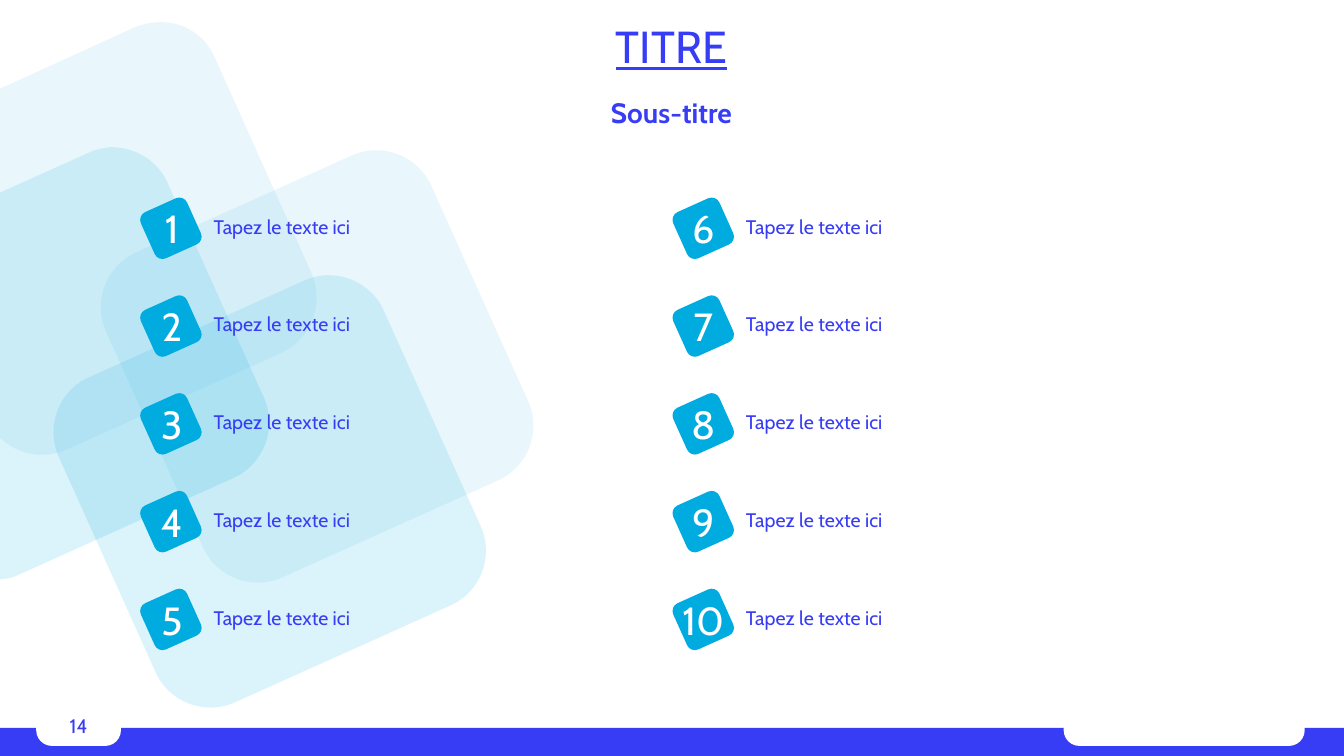
import math

from lxml import etree
from pptx import Presentation
from pptx import util as u
from pptx.dml.color import RGBColor
from pptx.enum import shapes, text
from pptx.oxml.ns import qn

BLUE, CYAN, SKY, WHITE = "373CF5", "00ABE0", "67C4E8", "FFFFFF"
FONT = "Cabin"
WIDTH, HEIGHT = 13.33, 7.5

TITLE, SUBTITLE, PAGE = "TITRE", "Sous-titre", "14"
# Tile left, number left, number width, labels
ITEM_COLUMNS = [
    (1.39, 1.47, 0.47, ["Tapez le texte ici"] * 5),
    (6.67, 6.73, 0.49, ["Tapez le texte ici"] * 5),
]
FOOTER_TABS = [(10.55, 2.39), (0.36, 0.84)]  # left, width

# Whole background tiles: left, top, colour
WHOLE_TILES = [(0.53, 2.73, CYAN), (1, 1.49, SKY)]
# Tiles cut at the slide's left edge: box, colour, outline (2 numbers: line, 6: curve)
CUT_TILES = [
    ((-0.02, 1.46, 2.69, 4.29), CYAN, [
        (1.1, 1.46), (1.34, 1.46, 1.56, 1.59, 1.66, 1.81), (2.62, 3.95),
        (2.75, 4.25, 2.62, 4.6, 2.32, 4.74), (0.19, 5.7),
        (0.15, 5.72, 0.11, 5.73, 0.07, 5.74), (-0.02, 5.75), (-0.02, 1.92),
        (0.87, 1.52), (0.95, 1.48, 1.02, 1.47, 1.1, 1.46)]),
    ((-0.02, 0.22, 3.16, 4.29), SKY, [
        (1.57, 0.22), (1.81, 0.21, 2.03, 0.34, 2.13, 0.57), (3.09, 2.71),
        (3.22, 3.01, 3.09, 3.36, 2.79, 3.5), (0.66, 4.46),
        (0.43, 4.56, 0.18, 4.51, 0.01, 4.35), (-0.02, 4.32), (-0.02, 0.89),
        (1.34, 0.27), (1.42, 0.24, 1.5, 0.22, 1.57, 0.22)]),
]

TILT = math.radians(-24.2)
TILE, STRAIGHT_SHARE = 4.29, 0.547
FIRST_ROW, ROW_PITCH, BADGE = 1.96, 0.97, 0.61
LABEL_OFFSET, LABEL_WIDTH = 0.63, 3.66


def rgb(colour):
    return RGBColor.from_string(colour)


def paint(shape, colour, alpha=None):
    shape.shadow.inherit = False
    shape.fill.solid()
    shape.fill.fore_color.rgb = rgb(colour)
    shape.line.fill.background()
    if alpha is not None:
        srgb = shape.fill._xPr.find(qn("a:solidFill")).find(qn("a:srgbClr"))
        etree.SubElement(srgb, qn("a:alpha")).set("val", str(alpha * 1000))


def tile_outline(left, top, size):
    """Lines and curves of a tilted rounded square that fills a box of the given size."""
    half = size * STRAIGHT_SHARE / 2
    radius = size / 2 - half * (math.cos(TILT) - math.sin(TILT))
    edge, pull = half + radius, half + 0.55 * radius

    def turned(*points, quarter):
        angle = TILT + quarter * math.pi / 2
        placed = []
        for x, y in points:
            placed += [left + size / 2 + x * math.cos(angle) - y * math.sin(angle),
                       top + size / 2 + x * math.sin(angle) + y * math.cos(angle)]
        return tuple(placed)

    outline = [turned((edge, -half), quarter=0)]
    for quarter in range(4):
        outline.append(turned((edge, half), quarter=quarter))
        outline.append(turned((edge, pull), (pull, edge), (half, edge), quarter=quarter))
    return outline


def add_tile(parts, box, outline, colour, alpha=None):
    """Draw an outline of lines and curves whose bounds are the box."""
    left, top, width, height = map(u.Inches, box)
    right, bottom = left + width, top + height
    builder = parts.build_freeform(left, top)
    builder.add_line_segments([(right, top), (right, bottom), (left, bottom)])
    tile = builder.convert_to_shape()
    path = next(tile._element.iter(qn("a:path")))
    for child in list(path):
        path.remove(child)
    for index, step in enumerate(outline):
        kind = "a:cubicBezTo" if len(step) == 6 else "a:lnTo" if index else "a:moveTo"
        segment = etree.SubElement(path, qn(kind))
        for x, y in zip(step[::2], step[1::2]):
            point = etree.SubElement(segment, qn("a:pt"))
            point.set("x", str(u.Inches(x) - left))
            point.set("y", str(u.Inches(y) - top))
    etree.SubElement(path, qn("a:close"))
    paint(tile, colour, alpha)


def add_square_tile(parts, left, top, size, colour, alpha=None):
    add_tile(parts, (left, top, size, size), tile_outline(left, top, size), colour, alpha)


def add_rounded(parts, box, rounding):
    shape = parts.add_shape(shapes.MSO_SHAPE.ROUNDED_RECTANGLE, *map(u.Inches, box))
    shape.adjustments[0] = rounding
    return shape


def write(shape, words, size, colour=BLUE, align=text.PP_ALIGN.CENTER,
          anchor=text.MSO_ANCHOR.MIDDLE, spacing=None, bold=False,
          underline=False, wrap=True):
    frame = shape.text_frame
    frame.auto_size = text.MSO_AUTO_SIZE.NONE
    frame.word_wrap = wrap
    frame.vertical_anchor = anchor
    paragraph = frame.paragraphs[0]
    paragraph.alignment = align
    if spacing is not None:
        paragraph.line_spacing = spacing
    run = paragraph.add_run()
    run.text = words
    font = run.font
    font.name, font.size, font.color.rgb = FONT, u.Pt(size), rgb(colour)
    font.bold, font.underline = bold, underline


def add_text(parts, box, words, size, **style):
    write(parts.add_textbox(*map(u.Inches, box)), words, size, **style)


def add_item(slide, number, number_left, number_width, label, left, top):
    parts = slide.shapes.add_group_shape().shapes
    add_square_tile(parts, left, top, BADGE, CYAN)
    digit = add_rounded(parts, (number_left, top + 0.02, number_width, 0.57), 0)
    digit.shadow.inherit = False
    digit.fill.background()
    digit.line.fill.background()
    write(digit, str(number), 28, colour=WHITE, wrap=False)
    add_text(parts, (left + LABEL_OFFSET, top, LABEL_WIDTH, BADGE), label, 14,
             align=text.PP_ALIGN.LEFT, spacing=u.Pt(14))


def main():
    prs = Presentation()
    prs.slide_width, prs.slide_height = u.Inches(WIDTH), u.Inches(HEIGHT)
    slide = prs.slides.add_slide(prs.slide_layouts[5])

    title = slide.shapes.title
    title.left, title.top = u.Inches(0.89), u.Inches(0.2)
    title.width, title.height = u.Inches(11.54), u.Inches(0.46)
    write(title, TITLE, 32, anchor=text.MSO_ANCHOR.TOP, spacing=0.9, underline=True)

    backdrop = slide.shapes.add_group_shape().shapes
    for left, top, colour in WHOLE_TILES:
        add_square_tile(backdrop, left, top, TILE, colour, alpha=14)
    for box, colour, outline in CUT_TILES:
        add_tile(backdrop, box, outline, colour, alpha=14)

    bar = slide.shapes.add_shape(shapes.MSO_SHAPE.RECTANGLE, 0, u.Inches(7.22),
                                 prs.slide_width, u.Inches(0.28))
    paint(bar, BLUE)
    for left, width in FOOTER_TABS:
        paint(add_rounded(slide.shapes, (left, 7.02, width, 0.38), 0.41), WHITE)
    add_text(slide.shapes, (0.29, 7.03, 0.98, 0.3), PAGE, 14, anchor=text.MSO_ANCHOR.TOP)
    add_text(slide.shapes, (0.89, 0.83, 11.54, 0.61), SUBTITLE, 20, spacing=0.9, bold=True)

    number = 1
    for left, number_left, number_width, labels in ITEM_COLUMNS:
        for row, label in enumerate(labels):
            add_item(slide, number, number_left, number_width, label,
                     left, FIRST_ROW + row * ROW_PITCH)
            number += 1

    prs.save("out.pptx")


if __name__ == "__main__":
    main()
